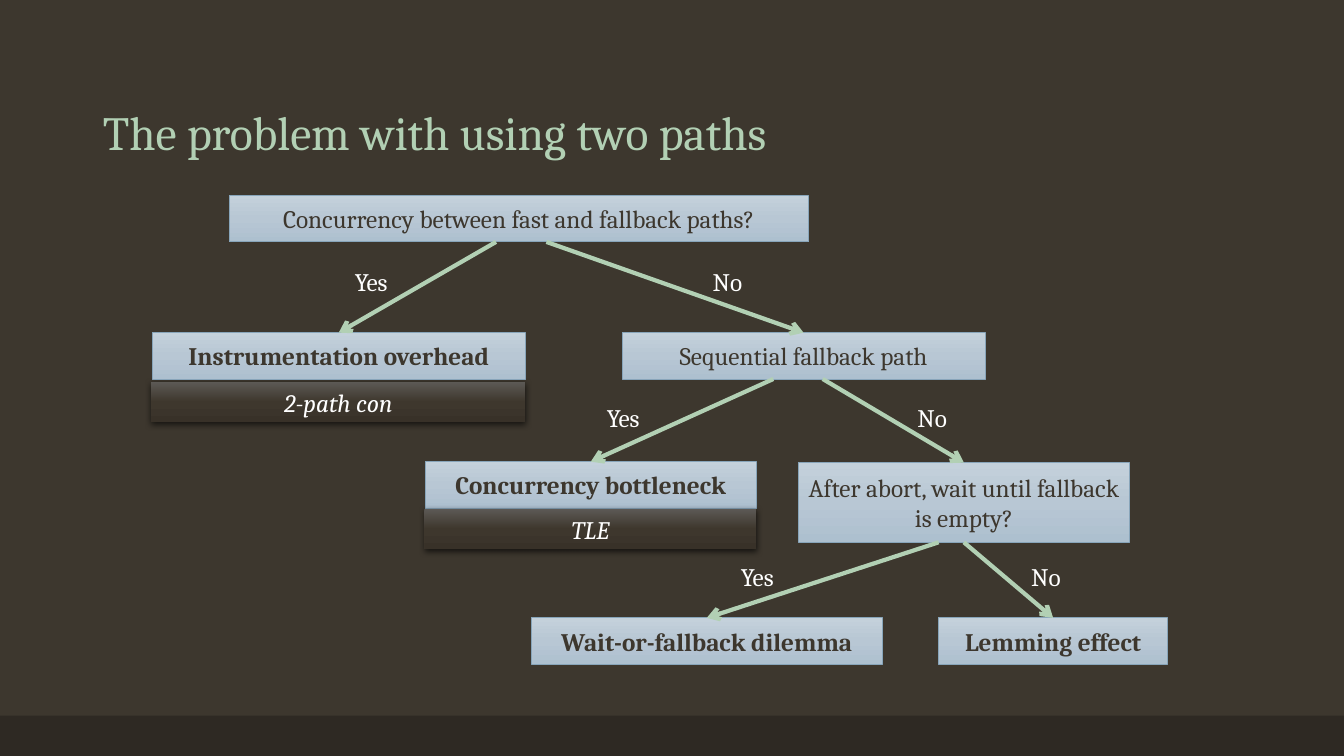
from pptx import Presentation
from pptx.dml.color import RGBColor
from pptx.enum.shapes import MSO_CONNECTOR, MSO_SHAPE
from pptx.enum.text import MSO_ANCHOR, MSO_AUTO_SIZE, PP_ALIGN
from pptx.oxml import parse_xml
from pptx.oxml.ns import nsdecls
from pptx.util import Inches, Pt

FONT = "Cambria"
DARK = RGBColor(0x3D, 0x37, 0x2E)
BAR = RGBColor(0x2E, 0x29, 0x23)
MINT = RGBColor(0xB2, 0xD0, 0xB4)
EDGE = RGBColor(0x88, 0xA5, 0xBA)
WHITE = RGBColor(0xFF, 0xFF, 0xFF)
BLUES = (RGBColor(0xC4, 0xD1, 0xDB), RGBColor(0xB8, 0xC7, 0xD4),
         RGBColor(0xAD, 0xC0, 0xCF))
BROWNS = (RGBColor(0x5C, 0x59, 0x55), RGBColor(0x3E, 0x37, 0x2D),
          RGBColor(0x38, 0x31, 0x28))


def write(shape, text, color, size=18, align=PP_ALIGN.CENTER,
          bold=False, italic=False):
    shape.text_frame.text = text
    par = shape.text_frame.paragraphs[0]
    par.alignment = align
    font = par.font
    font.name, font.size = FONT, Pt(size)
    font.bold, font.italic = bold, italic
    font.color.rgb = color


def add_rect(slide, x, y, w, h):
    rect = slide.shapes.add_shape(
        MSO_SHAPE.RECTANGLE, Inches(x), Inches(y), Inches(w), Inches(h))
    rect.shadow.inherit = False
    rect.line.fill.background()
    return rect


def shade(shape, colors):
    """Fill from top to bottom with evenly spaced colours."""
    step = 100000 // (len(colors) - 1)
    stops = "".join(f'<a:gs pos="{i * step}"><a:srgbClr val="{color}"/></a:gs>'
                    for i, color in enumerate(colors))
    props = shape.element.spPr
    props.insert(2, parse_xml(
        f'<a:gradFill {nsdecls("a")} rotWithShape="1"><a:gsLst>{stops}</a:gsLst>'
        '<a:lin ang="5400000" scaled="0"/></a:gradFill>'))


def add_node(slide, text, x, y, w, h=0.46, bold=False):
    node = add_rect(slide, x, y, w, h)
    shade(node, BLUES)
    node.line.color.rgb = EDGE
    node.line.width = Pt(0.5)
    node.text_frame.vertical_anchor = MSO_ANCHOR.MIDDLE
    write(node, text, DARK, bold=bold)
    return node


def add_case(slide, text, x, y, w):
    """Dark strip below a node that names an example."""
    case = add_rect(slide, x, y, w, 0.4)
    shade(case, BROWNS)
    case.element.spPr.find("{*}effectLst").append(parse_xml(
        f'<a:outerShdw {nsdecls("a")} blurRad="{Pt(4.5)}" dist="{Pt(1.5)}" '
        'dir="5400000" rotWithShape="0"><a:srgbClr val="000000">'
        '<a:alpha val="63000"/></a:srgbClr></a:outerShdw>'))
    case.text_frame.vertical_anchor = MSO_ANCHOR.TOP
    write(case, text, WHITE, italic=True)


def add_arrow(slide, parent, child, x):
    """Run from x on the parent's lower edge to the child's top centre."""
    arrow = slide.shapes.add_connector(
        MSO_CONNECTOR.STRAIGHT, Inches(x), parent.top + parent.height,
        child.left + child.width // 2, child.top)
    arrow.line.color.rgb = MINT
    arrow.line.width = Pt(3)
    arrow.line._get_or_add_ln().append(
        parse_xml(f'<a:tailEnd {nsdecls("a")} type="arrow"/>'))
    arrow.element.spPr.append(parse_xml(f'<a:effectLst {nsdecls("a")}/>'))


def add_label(slide, text, x, y, w):
    label = slide.shapes.add_textbox(
        Inches(x), Inches(y), Inches(w), Inches(0.4))
    label.text_frame.word_wrap = False
    label.text_frame.auto_size = MSO_AUTO_SIZE.SHAPE_TO_FIT_TEXT
    write(label, text, WHITE, align=PP_ALIGN.LEFT)


def add_title(slide, text):
    title = slide.shapes.title
    title.left, title.top = Inches(0.92), Inches(0.4)
    title.width, title.height = Inches(11.5), Inches(1.25)
    title.text_frame.vertical_anchor = MSO_ANCHOR.BOTTOM
    write(title, text, MINT, size=34, align=PP_ALIGN.LEFT)
    title.text_frame.paragraphs[0].line_spacing = 0.9


def main():
    deck = Presentation()
    deck.slide_width, deck.slide_height = Inches(13.33), Inches(7.5)
    slide = deck.slides.add_slide(deck.slide_layouts[5])
    slide.background.fill.solid()
    slide.background.fill.fore_color.rgb = DARK
    bar = add_rect(slide, 0, 7.1, 13.33, 0.4)
    bar.fill.solid()
    bar.fill.fore_color.rgb = BAR
    add_title(slide, "The problem with using two paths")

    add_case(slide, "2-path con", 1.5, 3.79, 3.71)
    root = add_node(
        slide, "Concurrency between fast and fallback paths?", 2.27, 1.94, 5.75)
    cost = add_node(slide, "Instrumentation overhead", 1.51, 3.3, 3.7, bold=True)
    serial = add_node(slide, "Sequential fallback path", 6.17, 3.3, 3.6)
    choke = add_node(slide, "Concurrency bottleneck", 4.22, 4.58, 3.28, bold=True)
    wait = add_node(slide, "After abort, wait until fallback is empty?",
                    7.92, 4.59, 3.28, 0.79)
    stall = add_node(slide, "Wait-or-fallback dilemma", 5.27, 6.13, 3.48, bold=True)
    lemming = add_node(slide, "Lemming effect", 9.31, 6.13, 2.27, bold=True)
    add_case(slide, "TLE", 4.21, 5.05, 3.29)

    # Parent, label top, then child, arrow start and label left for each answer
    splits = (
        (root, 2.59, (cost, 4.92, 3.42), (serial, 5.42, 6.97)),
        (serial, 3.94, (choke, 7.67, 5.92), (wait, 8.16, 9)),
        (wait, 5.52, (stall, 9.31, 7.25), (lemming, 9.56, 10.13)),
    )
    for parent, y, *sides in splits:
        for (child, start, x), (text, w) in zip(sides, (("Yes", 0.59), ("No", 0.53))):
            add_arrow(slide, parent, child, start)
            add_label(slide, text, x, y, w)

    deck.save("out.pptx")


if __name__ == "__main__":
    main()
